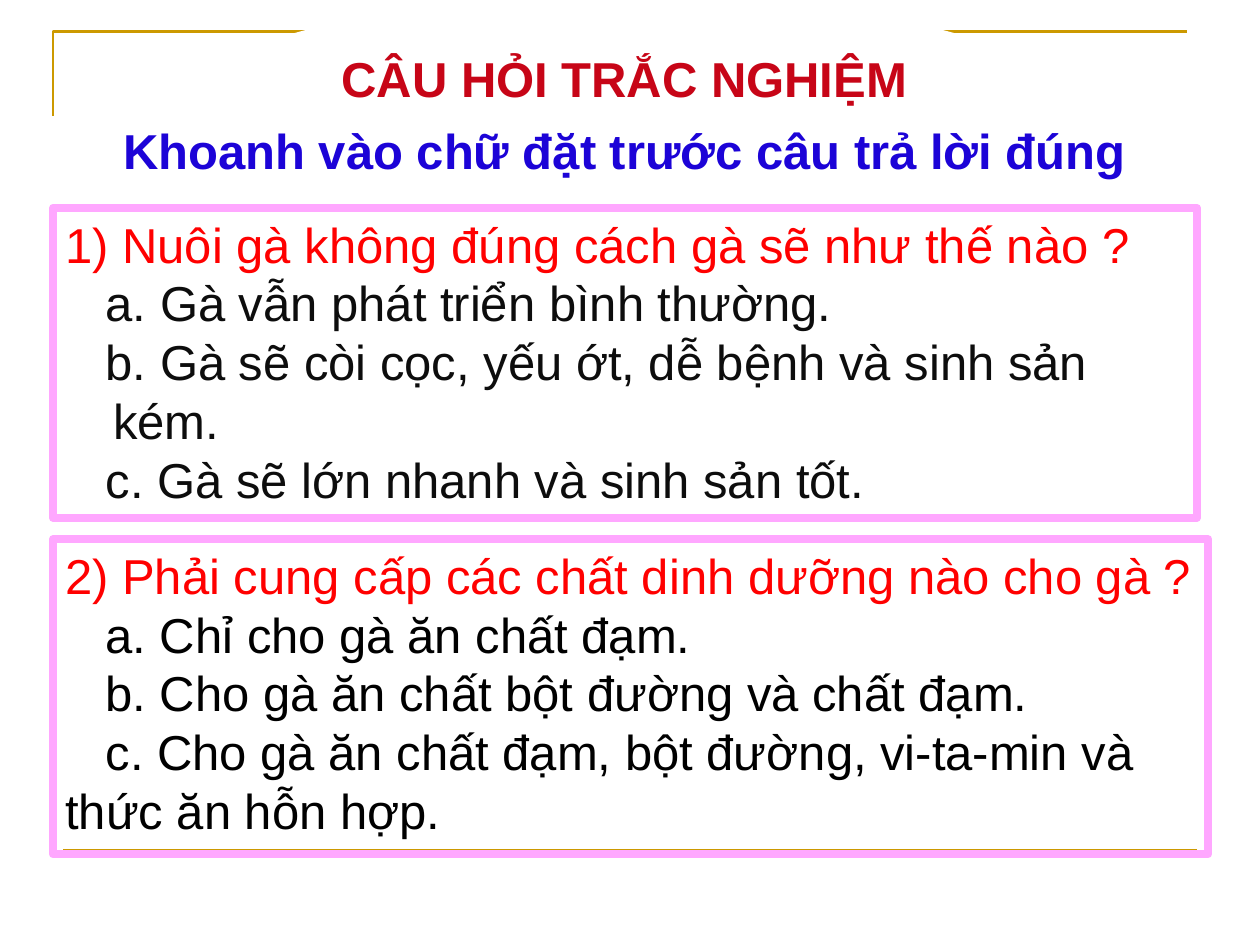
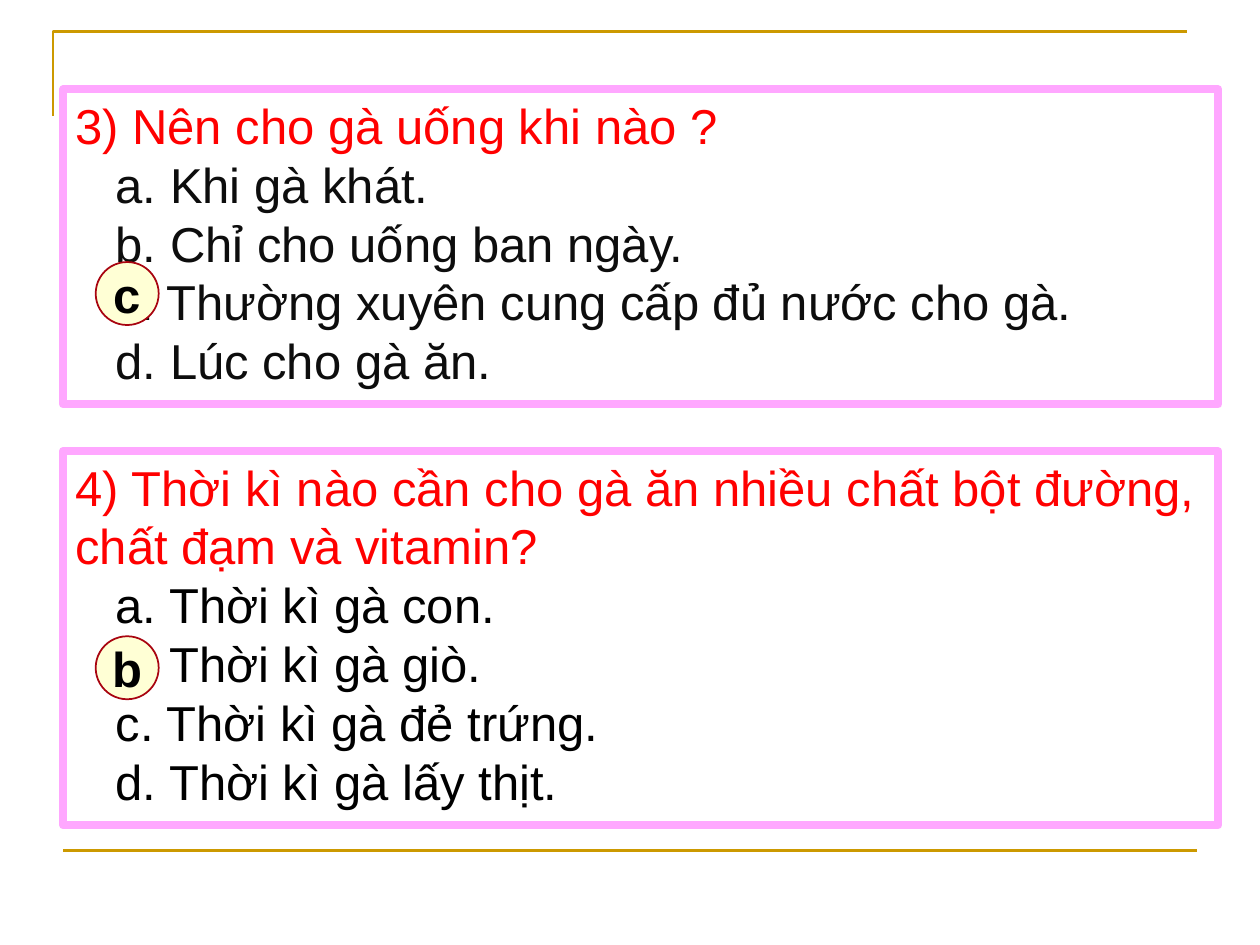
from lxml import etree
from pptx import Presentation
from pptx.dml.color import RGBColor
from pptx.enum.shapes import MSO_CONNECTOR, MSO_SHAPE
from pptx.enum.text import MSO_ANCHOR, PP_ALIGN
from pptx.oxml.ns import qn
from pptx.util import Inches, Pt

RECT, OVAL = MSO_SHAPE.RECTANGLE, MSO_SHAPE.OVAL
LINE = MSO_CONNECTOR.STRAIGHT
TOP, MIDDLE = MSO_ANCHOR.TOP, MSO_ANCHOR.MIDDLE
LEFT, CENTER = PP_ALIGN.LEFT, PP_ALIGN.CENTER

COLORS = {
    "gold": "CC9900", "pink": "FFA7FF", "white": "FFFFFF",
    "cream": "FFFFD5", "maroon": "A80410", "title": "C70517",
    "blue": "1C03D7", "red": "FF0000", "ink": "0D0D0D", "black": "000000",
}
FONT, SIZE, PITCH = "Arial", Pt(28), Pt(33.6)
INDENT = 0.32
MARK = 0.5


def color(name):
    return RGBColor.from_string(COLORS[name])


def style(par, name, bold=False, align=LEFT):
    par.alignment = align
    for run in par.runs:
        run.font.name = FONT
        run.font.size = SIZE
        run.font.bold = bold
        run.font.color.rgb = color(name)


def outline(shape, name, width):
    shape.line.color.rgb = color(name)
    shape.line.width = Pt(width)


def add_shape(slide, kind, box, fill, line, width):
    shape = slide.shapes.add_shape(kind, *map(Inches, box))
    shape.shadow.inherit = False
    if fill:
        shape.fill.solid()
        shape.fill.fore_color.rgb = color(fill)
    else:
        shape.fill.background()
    outline(shape, line, width)
    return shape


def add_frame(slide):
    """Gold corner at the top left and gold rule at the bottom."""
    left, top, width, height = 0.42, 0.25, 9, 0.67
    pen = slide.shapes.build_freeform(Inches(left), Inches(top + height), 1)
    pen.add_line_segments([(Inches(left), Inches(top)),
                           (Inches(left + width), Inches(top))], close=False)
    corner = pen.convert_to_shape()
    corner.shadow.inherit = False
    corner.fill.background()
    outline(corner, "gold", 1.5)
    rule = slide.shapes.add_connector(
        LINE, Inches(0.5), Inches(6.75), Inches(9.5), Inches(6.75))
    outline(rule, "gold", 1.5)
    etree.SubElement(rule.element.spPr, qn("a:effectLst"))


def add_oval(slide, box, text, ink, fill, line, width):
    """Ellipse with one bold, centred line of text."""
    oval = add_shape(slide, OVAL, box, fill, line, width)
    frame = oval.text_frame
    frame.text = text
    frame.word_wrap = False
    frame.vertical_anchor = MIDDLE
    style(frame.paragraphs[0], ink, True, CENTER)


def add_heading(slide, box, text):
    frame = slide.shapes.add_textbox(*map(Inches, box)).text_frame
    frame.word_wrap = True
    frame.text = text
    style(frame.paragraphs[0], "blue", True)


def add_question(slide, box, lines, ink, hang=0):
    """Pink box: a red question, then its answers, wrapped lines at hang."""
    frame = add_shape(slide, RECT, box, None, "pink", 4.5).text_frame
    frame.word_wrap = True
    frame.vertical_anchor = TOP
    frame.text = "\n".join(lines)
    for i, par in enumerate(frame.paragraphs):
        style(par, ink if i else "red")
        par.line_spacing = PITCH
        start = INDENT if i else 0
        props = par._p.get_or_add_pPr()
        props.set("marL", str(Inches(hang)))
        props.set("indent", str(Inches(start - hang)))


def add_mark(slide, top, letter):
    """Circle round the right answer."""
    add_oval(slide, (0.76, top, MARK, MARK), letter,
             "black", "cream", "maroon", 1)


def new_slide(deck):
    slide = deck.slides.add_slide(deck.slide_layouts[6])
    add_frame(slide)
    return slide


def first_page(deck):
    slide = new_slide(deck)
    add_question(slide, (0.42, 1.65, 9.08, 2.46), [
        "1) Nuôi gà không đúng cách gà sẽ như thế nào ?",
        "a. Gà vẫn phát triển bình thường.",
        "b. Gà sẽ còi cọc, yếu ớt, dễ bệnh và sinh sản kém.",
        "c. Gà sẽ lớn nhanh và sinh sản tốt.",
    ], "ink", hang=0.38)
    add_oval(slide, (1.83, 0.03, 6.25, 1.17), "CÂU HỎI TRẮC NGHIỆM",
             "title", "white", "white", 4.5)
    add_question(slide, (0.42, 4.28, 9.17, 2.5), [
        "2) Phải cung cấp các chất dinh dưỡng nào cho gà ?",
        "a. Chỉ cho gà ăn chất đạm.",
        "b. Cho gà ăn chất bột đường và chất đạm.",
        "c. Cho gà ăn chất đạm, bột đường, vi-ta-min và thức ăn hỗn hợp.",
    ], "black")
    add_heading(slide, (0.88, 0.91, 8.25, 0.57),
                "Khoanh vào chữ đặt trước câu trả lời đúng")


def second_page(deck):
    slide = new_slide(deck)
    add_question(slide, (0.5, 0.71, 9.17, 2.5), [
        "3) Nên cho gà uống khi nào ?",
        "a. Khi gà khát.",
        "b. Chỉ cho uống ban ngày.",
        "c. Thường xuyên cung cấp đủ nước cho gà.",
        "d. Lúc cho gà ăn.",
    ], "ink")
    add_question(slide, (0.5, 3.58, 9.17, 2.97), [
        "4) Thời kì nào cần cho gà ăn nhiều chất bột đường, "
        "chất đạm và vitamin?",
        "a. Thời kì gà con.",
        "b. Thời kì gà giò.",
        "c. Thời kì gà đẻ trứng.",
        "d. Thời kì gà lấy thịt.",
    ], "black")
    add_mark(slide, 2.08, "c")
    add_mark(slide, 5.05, "b")


def main():
    deck = Presentation()
    deck.slide_width, deck.slide_height = Inches(10), Inches(7.5)
    first_page(deck)
    second_page(deck)
    deck.save("out.pptx")


if __name__ == "__main__":
    main()
